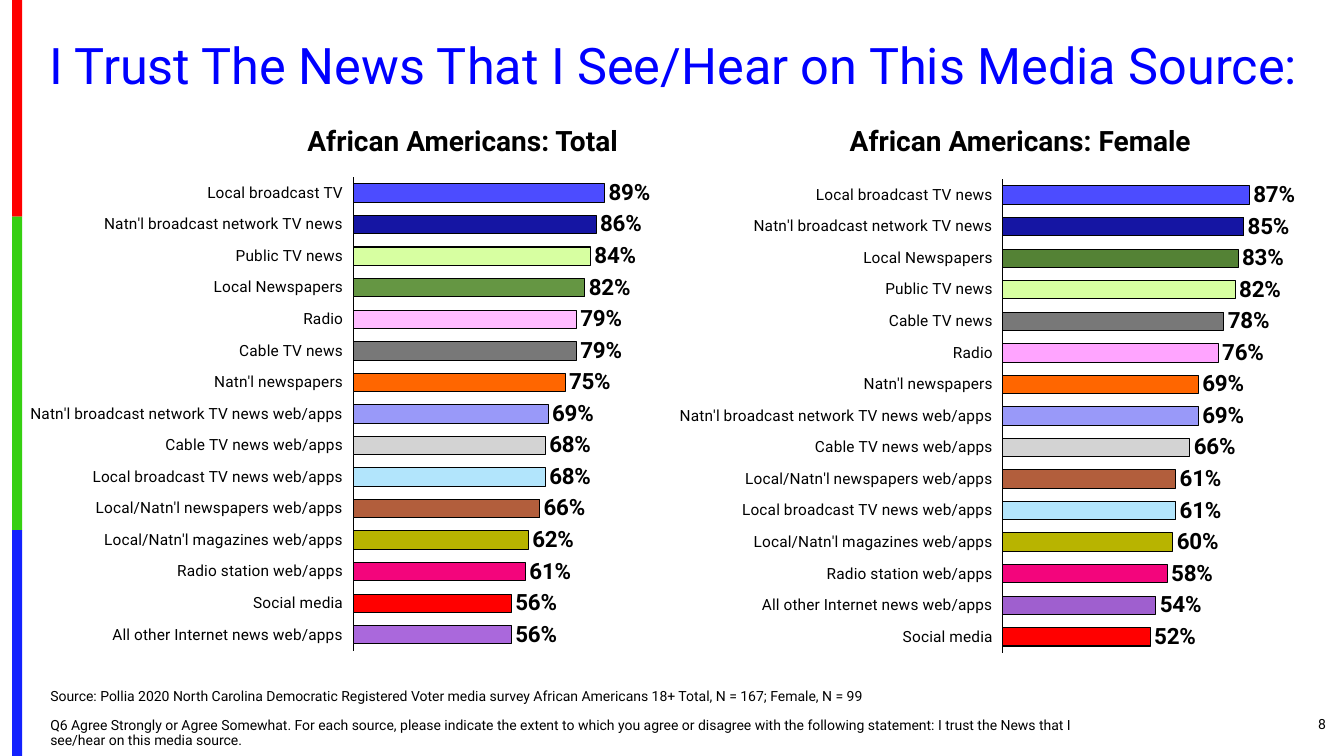
from lxml import etree
from pptx import Presentation
from pptx.chart.data import CategoryChartData
from pptx.dml.color import RGBColor
from pptx.enum.chart import XL_CHART_TYPE, XL_LABEL_POSITION, XL_TICK_LABEL_POSITION, XL_TICK_MARK
from pptx.enum.shapes import MSO_SHAPE
from pptx.enum.text import MSO_ANCHOR, PP_ALIGN
from pptx.oxml.ns import qn
from pptx.util import Inches, Pt

BAR = XL_CHART_TYPE.BAR_CLUSTERED
OUTSIDE = XL_LABEL_POSITION.OUTSIDE_END
LOW = XL_TICK_LABEL_POSITION.LOW
NO_TICK = XL_TICK_MARK.NONE
RECT = MSO_SHAPE.RECTANGLE
TOP, MIDDLE, BOTTOM = MSO_ANCHOR.TOP, MSO_ANCHOR.MIDDLE, MSO_ANCHOR.BOTTOM
LEFT, CENTER, RIGHT = PP_ALIGN.LEFT, PP_ALIGN.CENTER, PP_ALIGN.RIGHT
FONT = "Roboto"
BLACK = "000000"

# Rows run from top to bottom: label, percent, bar colour
TOTAL = [
    ("Local broadcast TV", 89, "4C4CFF"),
    ("Natn'l broadcast network TV news", 86, "1515A3"),
    ("Public TV news", 84, "D7FFA1"),
    ("Local Newspapers", 82, "659643"),
    ("Radio", 79, "FFBBFF"),
    ("Cable TV news", 79, "787878"),
    ("Natn'l newspapers", 75, "FF6600"),
    ("Natn'l broadcast network TV news web/apps", 69, "9999F9"),
    ("Cable TV news web/apps", 68, "D3D3D3"),
    ("Local broadcast TV news web/apps", 68, "B2E5FC"),
    ("Local/Natn'l newspapers web/apps", 66, "B25E3C"),
    ("Local/Natn'l magazines web/apps", 62, "B8B400"),
    ("Radio station web/apps", 61, "F3057C"),
    ("Social media", 56, "FF0000"),
    ("All other Internet news web/apps", 56, "AA68DC"),
]
FEMALE = [
    ("Local broadcast TV news", 87, "4C4CFF"),
    ("Natn'l broadcast network TV news", 85, "1515A3"),
    ("Local Newspapers", 83, "548235"),
    ("Public TV news", 82, "D7FFA1"),
    ("Cable TV news", 78, "787878"),
    ("Radio", 76, "FFA4FF"),
    ("Natn'l newspapers", 69, "FF6600"),
    ("Natn'l broadcast network TV news web/apps", 69, "9999F9"),
    ("Cable TV news web/apps", 66, "D3D3D3"),
    ("Local/Natn'l newspapers web/apps", 61, "B25E3C"),
    ("Local broadcast TV news web/apps", 61, "B2E5FC"),
    ("Local/Natn'l magazines web/apps", 60, "B8B400"),
    ("Radio station web/apps", 58, "F3057C"),
    ("All other Internet news web/apps", 54, "9F5FCF"),
    ("Social media", 52, "FF0000"),
]
NOTES = [
    "Source: Pollia 2020 North Carolina Democratic Registered Voter media survey "
    "African Americans 18+ Total, N = 167; Female, N = 99",
    "Q6 Agree Strongly or Agree Somewhat. For each source, please indicate the extent "
    "to which you agree or disagree with the following statement: I trust the News "
    "that I see/hear on this media source.",
]


def color(code):
    return RGBColor.from_string(code)


def style(font, size, code=BLACK, bold=False):
    font.name, font.size, font.bold = FONT, Pt(size), bold
    font.color.rgb = color(code)


def outline(line):
    line.color.rgb = color(BLACK)
    line.width = Pt(0.75)


def write(slide, box, lines, size, code=BLACK, bold=False, align=LEFT,
          anchor=TOP, space=None, gap=0):
    frame = slide.shapes.add_textbox(*map(Inches, box)).text_frame
    frame.word_wrap = True
    frame.vertical_anchor = anchor
    for i, line in enumerate(lines):
        para = frame.paragraphs[0] if i == 0 else frame.add_paragraph()
        para.alignment = align
        para.line_spacing = space
        if i:
            para.space_before = Pt(gap)
        run = para.add_run()
        run.text = line
        style(run.font, size, code, bold)


def stripe(slide, box):
    left, top, width, height = box
    marks = [0, 2.15, 5.26, height]
    for start, end, code in zip(marks, marks[1:], ["FE0000", "36CF12", "1322FE"]):
        bar = slide.shapes.add_shape(
            RECT, *map(Inches, (left, top + start, width, end - start)))
        bar.shadow.inherit = False
        bar.fill.solid()
        bar.fill.fore_color.rgb = color(code)
        bar.line.fill.background()


def place(chart, area):
    """Fix the inner plot area as fractions of the chart."""
    plot = chart._chartSpace.chart.plotArea
    for old in plot.findall(qn("c:layout")):
        plot.remove(old)
    layout = etree.Element(qn("c:layout"))
    manual = etree.SubElement(layout, qn("c:manualLayout"))
    names = ["layoutTarget", "xMode", "yMode", "x", "y", "w", "h"]
    for name, val in zip(names, ["inner", "edge", "edge", *area]):
        etree.SubElement(manual, qn("c:" + name)).set("val", str(val))
    plot.insert(0, layout)


def panel(slide, box, rows, area):
    rows = rows[::-1]
    data = CategoryChartData(number_format="0%")
    data.categories = [label for label, _, _ in rows]
    data.add_series("Series 1", [pct / 100 for _, pct, _ in rows])
    chart = slide.shapes.add_chart(BAR, *map(Inches, box), data).chart
    chart.has_legend = chart.has_title = False
    style(chart.font, 10)
    place(chart, area)

    # Axes
    cats, vals = chart.category_axis, chart.value_axis
    cats.major_tick_mark = cats.minor_tick_mark = NO_TICK
    cats.tick_label_position = LOW
    style(cats.tick_labels.font, 11)
    outline(cats.format.line)
    vals.minimum_scale, vals.maximum_scale = 0, 1.1
    vals.has_major_gridlines = False
    vals.visible = False

    # Bars and their values
    plot = chart.plots[0]
    plot.gap_width = 72
    plot.vary_by_categories = False
    series = plot.series[0]
    for i, (_, _, code) in enumerate(rows):
        look = series.points[i].format
        look.fill.solid()
        look.fill.fore_color.rgb = color(code)
        outline(look.line)
    labels = series.data_labels
    labels.show_value = True
    labels.number_format, labels.number_format_is_linked = "0%", False
    labels.position = OUTSIDE
    style(labels.font, 16, bold=True)


def footer(slide, box):
    left, top, width, height = box
    write(slide, (left, top, 10.39, height), NOTES, 10, anchor=BOTTOM, space=0.9, gap=10)
    write(slide, (left + width - 1.08, top + 0.2, 1.08, 0.4), ["8"], 10,
          align=RIGHT, anchor=MIDDLE)


def main():
    deck = Presentation()
    deck.slide_width, deck.slide_height = Inches(13.33), Inches(7.5)
    slide = deck.slides.add_slide(deck.slide_layouts[6])
    stripe(slide, (0.12, 0, 0.1, 7.5))
    write(slide, (0.3, 0.35, 12.77, 0.65),
          ["I Trust The News That I See/Hear on This Media Source:"], 36,
          code="0000FF", align=CENTER, anchor=MIDDLE, space=0.9)
    panel(slide, (0.3, 1.62, 6.68, 4.98), TOTAL, (0.479, 0.028, 0.462, 0.943))
    panel(slide, (6.46, 1.65, 6.68, 4.98), FEMALE, (0.522, 0.026, 0.463, 0.943))
    for left, width, group in [(2.76, 3.66, "Total"), (8.08, 4.08, "Female")]:
        write(slide, (left, 1.18, width, 0.44), ["African Americans: " + group], 20,
              bold=True, align=CENTER)
    footer(slide, (0.4, 6.78, 12.85, 0.7))
    deck.save("out.pptx")


if __name__ == "__main__":
    main()
